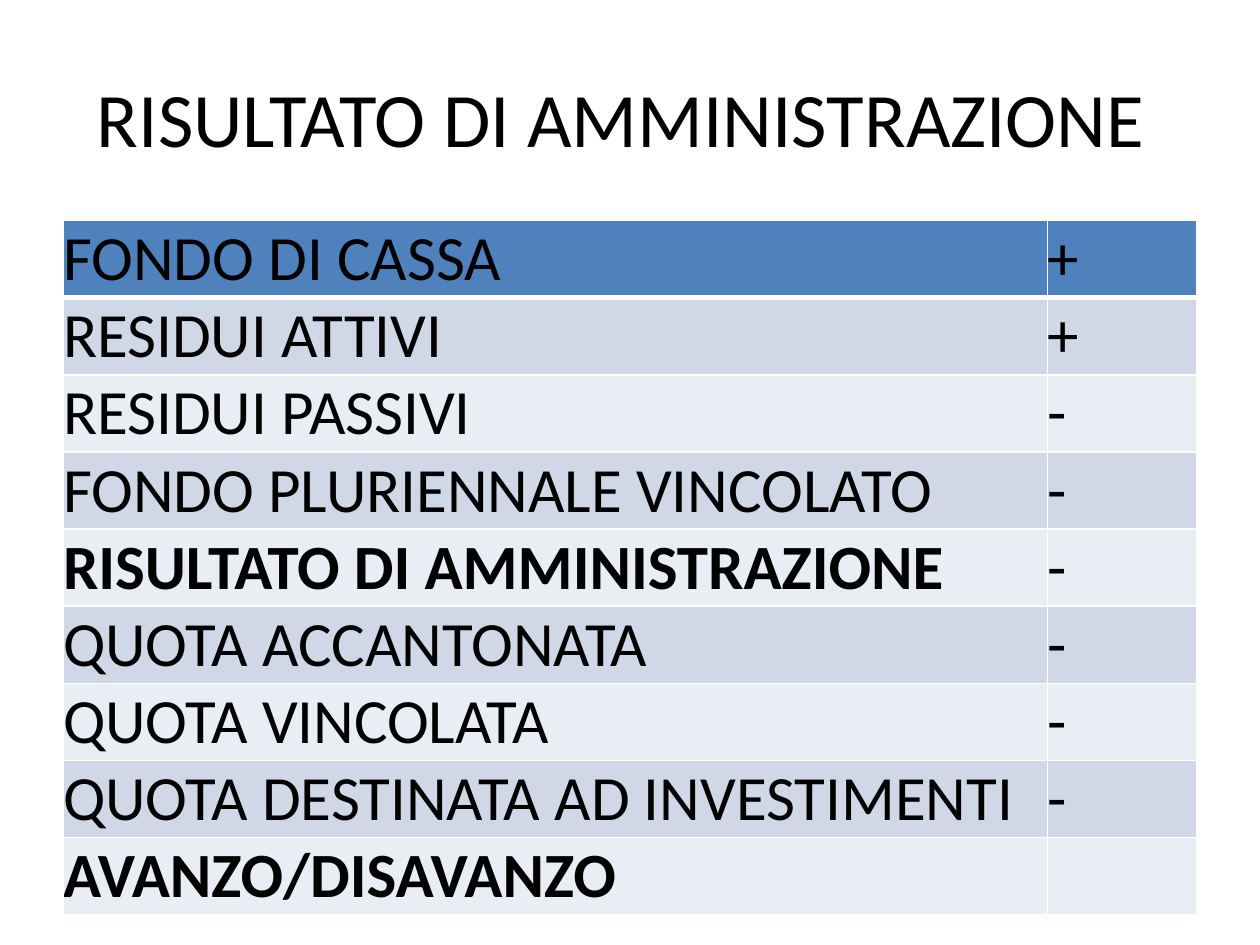
from pptx import Presentation
from pptx.dml.color import RGBColor
from pptx.enum.text import MSO_ANCHOR, PP_ALIGN
from pptx.oxml import parse_xml
from pptx.oxml.ns import nsdecls
from pptx.util import Inches, Pt

FONT = "Calibri"
BLACK, WHITE = "000000", "FFFFFF"
HEADER, BANDS = "4F81BD", ("D0D8E8", "E9EDF4")

# Label, sign, bold label
ROWS = [
    ("FONDO DI CASSA", "+", False),
    ("RESIDUI ATTIVI", "+", False),
    ("RESIDUI PASSIVI", "-", False),
    ("FONDO PLURIENNALE VINCOLATO", "-", False),
    ("RISULTATO DI AMMINISTRAZIONE", "-", True),
    ("QUOTA ACCANTONATA", "-", False),
    ("QUOTA VINCOLATA", "-", False),
    ("QUOTA DESTINATA AD INVESTIMENTI", "-", False),
    ("AVANZO/DISAVANZO", "", True),
]


def rgb(color):
    return RGBColor.from_string(color)


def format_runs(p, size, bold=False):
    for r in p.runs:
        r.font.name, r.font.size, r.font.bold = FONT, Pt(size), bold
        r.font.color.rgb = rgb(BLACK)


def set_borders(cell, widths):
    """Draw white borders; widths maps L, R, T, B to points."""
    tc_pr = cell._tc.get_or_add_tcPr()
    for i, (side, width) in enumerate(widths.items()):
        tc_pr.insert(i, parse_xml(
            f'<a:ln{side} {nsdecls("a")} w="{Pt(width)}"><a:solidFill>'
            f'<a:srgbClr val="{WHITE}"/></a:solidFill></a:ln{side}>'))


def place_title(s, box, text):
    title = s.shapes.title
    title.left, title.top, title.width, title.height = box
    tf = title.text_frame
    tf.text = text
    tf.word_wrap = True
    tf.vertical_anchor = MSO_ANCHOR.MIDDLE
    p = tf.paragraphs[0]
    p.alignment = PP_ALIGN.CENTER
    format_runs(p, 44)


def fill_cell(cell, text, bold, color, borders):
    cell.margin_left = cell.margin_right = 0
    cell.margin_top = cell.margin_bottom = 0
    cell.vertical_anchor = MSO_ANCHOR.BOTTOM
    cell.fill.solid()
    cell.fill.fore_color.rgb = rgb(color)
    set_borders(cell, borders)
    if text:
        cell.text = text
        format_runs(cell.text_frame.paragraphs[0], 36, bold)


def place_table(s, box, rows):
    table = s.shapes.add_table(len(rows), 2, *box).table
    width = box[2]
    table.columns[0].width = int(width * 0.868)
    table.columns[1].width = width - table.columns[0].width
    for i, (label, sign, bold) in enumerate(rows):
        color = BANDS[(i - 1) % 2] if i else HEADER
        # The rule under the header row is thicker
        borders = {"L": 1, "R": 1, "T": 3 if i == 1 else 1, "B": 1 if i else 3}
        fill_cell(table.cell(i, 0), label, bold, color, borders)
        fill_cell(table.cell(i, 1), sign, False, color, borders)


def main():
    prs = Presentation()
    prs.slide_width, prs.slide_height = Inches(10), Inches(7.5)
    w, h = prs.slide_width, prs.slide_height
    s = prs.slides.add_slide(prs.slide_layouts[5])

    # Title band and table share the same margins
    left, width = int(w * 0.05), int(w * 0.9)
    place_title(s, (left, int(h * 0.04), width, Inches(1.25)),
                "RISULTATO DI AMMINISTRAZIONE ")
    place_table(s, (left, Inches(1.75), width, int(h * 0.72)), ROWS)
    prs.save("out.pptx")


if __name__ == "__main__":
    main()
